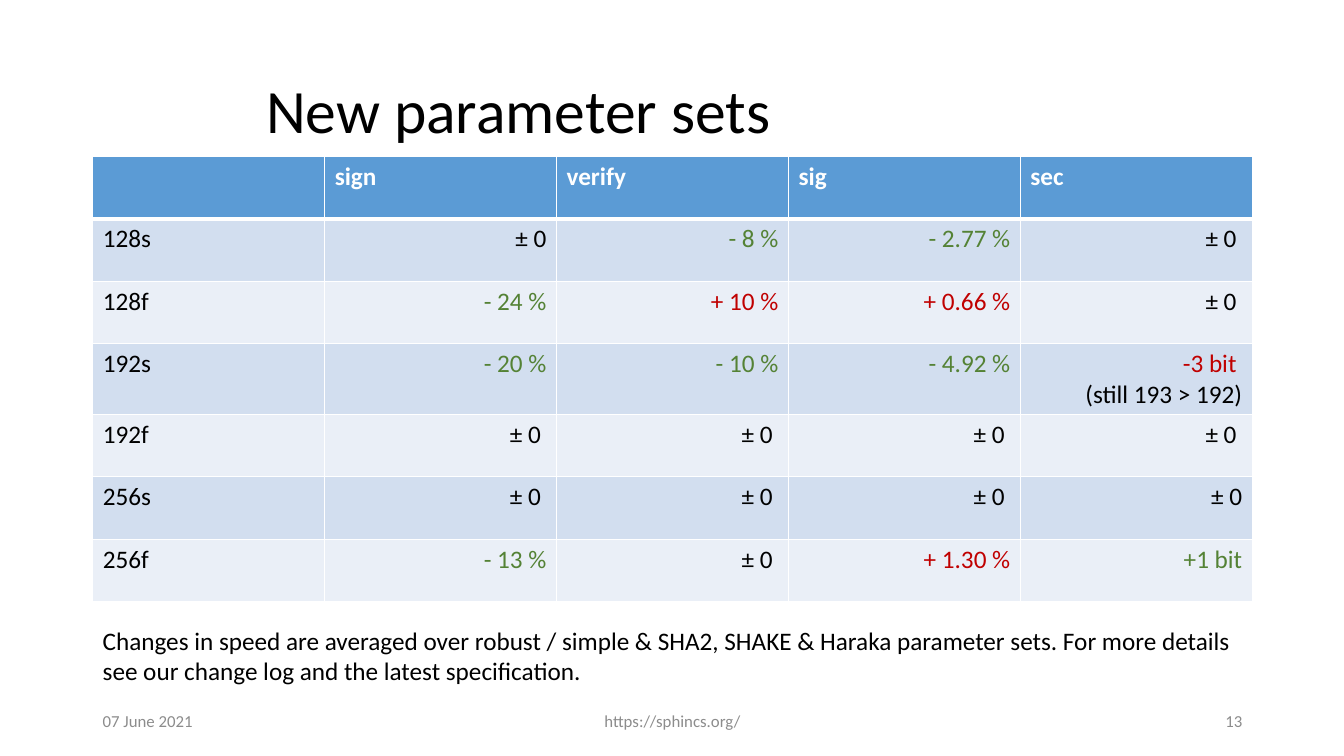
from lxml.etree import SubElement
from pptx import Presentation
from pptx.dml.color import RGBColor
from pptx.enum.text import MSO_ANCHOR, PP_ALIGN
from pptx.oxml.ns import qn
from pptx.util import Inches, Pt

BLACK, WHITE, GREY = "000000", "FFFFFF", "8C8C8C"
GREEN, RED = "548235", "C00000"
HEADER_FILL, BAND_FILLS = "5B9BD5", ("D2DEEF", "EAEFF7")
LEFT, WIDTH = 0.92, 11.5

HEADINGS = ["", "sign", "verify", "sig", "sec"]
CHANGES = [
    ["128s", "± 0", "- 8 %", "- 2.77 %", "± 0 "],
    ["128f", "- 24 %", "+ 10 %", "+ 0.66 %", "± 0 "],
    ["192s", "- 20 %", "- 10 %", "- 4.92 %", "-3 bit \n(still 193 > 192)"],
    ["192f", "± 0 ", "± 0 ", "± 0 ", "± 0 "],
    ["256s", "± 0 ", "± 0 ", "± 0 ", "± 0"],
    ["256f", "- 13 %", "± 0 ", "+ 1.30 %", "+1 bit"],
]


def rgb(color):
    return RGBColor.from_string(color)


def add_run(paragraph, text, size=18, color=BLACK, bold=False):
    run = paragraph.add_run()
    run.text = text
    run.font.color.rgb = rgb(color)
    font_format = {"name": "Calibri", "size": Pt(size), "bold": bold}
    for name, value in font_format.items():
        setattr(run.font, name, value)


def add_text(slide, box, text, size=18, color=BLACK, align=PP_ALIGN.LEFT,
             anchor=MSO_ANCHOR.MIDDLE, line_spacing=None):
    text_frame = slide.shapes.add_textbox(*map(Inches, box)).text_frame
    text_frame.word_wrap = True
    text_frame.vertical_anchor = anchor
    paragraph = text_frame.paragraphs[0]
    paragraph.alignment = align
    paragraph.line_spacing = line_spacing
    add_run(paragraph, text, size, color)


def set_borders(cell, widths):
    """Draw white cell borders, with widths in points keyed by side."""
    properties = cell._tc.get_or_add_tcPr()
    for side in "LRTB":
        line = SubElement(properties, qn(f"a:ln{side}"), w=str(Pt(widths.get(side, 1))))
        fill = SubElement(line, qn("a:solidFill"))
        SubElement(fill, qn("a:srgbClr"), val=WHITE)


def change_color(text, heading):
    """Green for an improvement, red for a loss; only security gains by growing."""
    better, worse = ("+", "-") if heading == "sec" else ("-", "+")
    return {better: GREEN, worse: RED}.get(text[0], BLACK)


def fill_cell(cell, text, fill, color, align=PP_ALIGN.LEFT, bold=False, borders=None):
    set_borders(cell, borders or {})
    cell.fill.solid()
    cell.fill.fore_color.rgb = rgb(fill)
    paragraph = cell.text_frame.paragraphs[0]
    paragraph.alignment = align
    value, _, remark = text.partition("\n")
    if value:
        add_run(paragraph, value, color=color, bold=bold)
    if remark:
        paragraph.add_line_break()
        add_run(paragraph, remark)


def add_change_table(slide, box, row_height=0.62):
    left, top, width, height = map(Inches, box)
    table = slide.shapes.add_table(
        len(CHANGES) + 1, len(HEADINGS), left, top, width, height).table
    for row in table.rows:
        row.height = Inches(row_height)
    for column, heading in enumerate(HEADINGS):
        fill_cell(table.cell(0, column), heading, HEADER_FILL, WHITE,
                  bold=True, borders={"B": 3})
        for row, values in enumerate(CHANGES, 1):
            text = values[column]
            fill_cell(
                table.cell(row, column), text, BAND_FILLS[(row - 1) % 2],
                change_color(text, heading),
                align=PP_ALIGN.RIGHT if column else PP_ALIGN.LEFT,
                borders={"T": 3} if row == 1 else None)


def add_footer(slide, box):
    left, top, width, height = box
    side, middle = 3, 4.5
    parts = [
        ("07 June 2021", left, side, PP_ALIGN.LEFT),
        ("https://sphincs.org/", left + (width - middle) / 2, middle, PP_ALIGN.CENTER),
        ("13", left + width - side, side, PP_ALIGN.RIGHT),
    ]
    for text, part_left, part_width, align in parts:
        add_text(slide, (part_left, top, part_width, height), text, 12, GREY, align)


def main():
    presentation = Presentation()
    presentation.slide_width = Inches(13.33)
    presentation.slide_height = Inches(7.5)
    slide = presentation.slides.add_slide(presentation.slide_layouts[6])
    add_text(slide, (2.54, 0.4, 8.61, 1.45), "New parameter sets", 44, line_spacing=0.9)
    add_change_table(slide, (LEFT, 1.55, WIDTH, 4.44))
    add_text(slide, (LEFT, 6.15, WIDTH, 0.71),
             "Changes in speed are averaged over robust / simple & SHA2, SHAKE & Haraka "
             "parameter sets. For more details see our change log and the latest "
             "specification.", anchor=MSO_ANCHOR.TOP)
    add_footer(slide, (LEFT, 6.95, WIDTH, 0.4))
    presentation.save("out.pptx")


if __name__ == "__main__":
    main()
